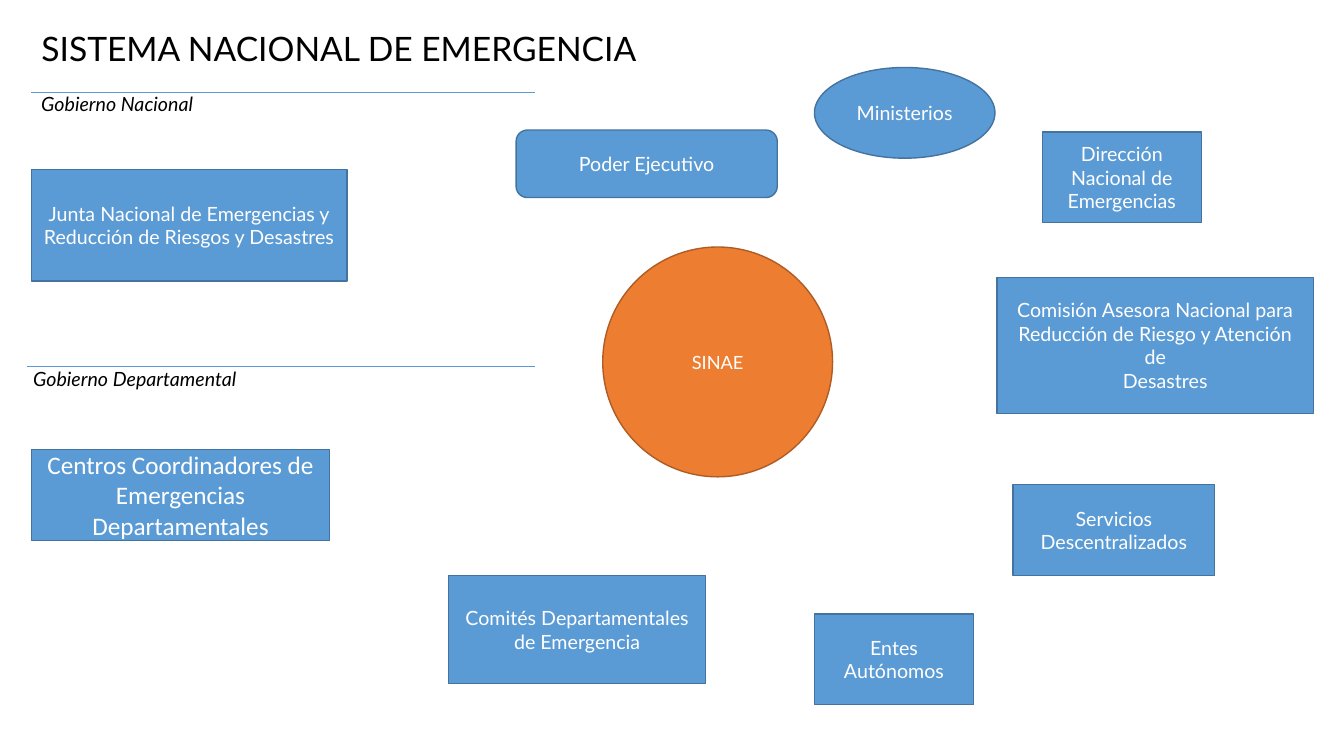
from lxml.etree import SubElement
from pptx import Presentation
from pptx.dml.color import RGBColor as RGB
from pptx.enum.shapes import MSO_CONNECTOR as CONN, MSO_SHAPE as SHAPE
from pptx.enum.text import MSO_ANCHOR as ANCHOR, MSO_AUTO_SIZE as FIT, PP_ALIGN as ALIGN
from pptx.oxml.ns import qn
from pptx.util import Inches, Pt

BLUE = RGB(0x5B, 0x9B, 0xD5)
NAVY = RGB(0x43, 0x73, 0x9E)
ORANGE = RGB(0xED, 0x7D, 0x31)
RUST = RGB(0xAF, 0x5C, 0x24)
WHITE = RGB(0xFF, 0xFF, 0xFF)
BLACK = RGB(0x00, 0x00, 0x00)

LEFT, RULE_END = 2.33, 39.83
ROW = 12


class Diagram:
    font = {"name": "Lato", "size": Pt(14)}
    boxed = {"word_wrap": True, "auto_size": FIT.NONE, "vertical_anchor": ANCHOR.MIDDLE}
    label = {"word_wrap": True, "auto_size": FIT.SHAPE_TO_FIT_TEXT, "vertical_anchor": ANCHOR.TOP}

    def __init__(self, prs):
        self.prs = prs
        self.s = prs.slides.add_slide(prs.slide_layouts[5])

    def x(self, share):
        return round(self.prs.slide_width * share / 100)

    def y(self, share):
        return round(self.prs.slide_height * share / 100)

    def area(self, left, top, width, height):
        return self.x(left), self.y(top), self.x(width), self.y(height)

    def apply(self, target, values):
        for key, value in values.items():
            setattr(target, key, value)

    def fill_text(self, tf, lines, frame, color, para, **font):
        self.apply(tf, frame)
        for i, line in enumerate(lines):
            p = tf.paragraphs[0] if i == 0 else tf.add_paragraph()
            self.apply(p, para)
            r = p.add_run()
            r.text = line
            self.apply(r.font, {**self.font, **font})
            r.font.color.rgb = color

    def title(self, text, *place):
        sp = self.s.shapes.title
        self.apply(sp, dict(zip(("left", "top", "width", "height"), self.area(*place))))
        para = {"alignment": ALIGN.LEFT, "line_spacing": 0.9}
        self.fill_text(sp.text_frame, [text], self.boxed, BLACK, para, size=Pt(24))

    def node(self, lines, *place, kind=SHAPE.RECTANGLE, fill=BLUE, edge=NAVY, **font):
        sp = self.s.shapes.add_shape(kind, *self.area(*place))
        sp.shadow.inherit = False
        sp.fill.solid()
        sp.fill.fore_color.rgb = fill
        sp.line.color.rgb = edge
        sp.line.width = Pt(1)
        self.fill_text(sp.text_frame, lines, self.boxed, WHITE, {"alignment": ALIGN.CENTER}, **font)
        return sp

    def section(self, text, rule_left, rule_top, left, top):
        y = self.y(rule_top)
        rule = self.s.shapes.add_connector(CONN.STRAIGHT, self.x(rule_left), y, self.x(RULE_END), y)
        rule.line.color.rgb = BLUE
        rule.line.width = Pt(0.5)
        SubElement(rule._element.spPr, qn("a:effectLst"))
        sp = self.s.shapes.add_textbox(*self.area(left, top, 17.63, 4.53))
        self.fill_text(sp.text_frame, [text], self.label, BLACK, {"alignment": ALIGN.LEFT}, italic=True)


def main():
    prs = Presentation()
    prs.slide_width, prs.slide_height = Inches(13.33), Inches(7.5)
    d = Diagram(prs)

    d.node(["SINAE"], 44.85, 32.67, 17.1, 30.4, kind=SHAPE.OVAL, fill=ORANGE, edge=RUST, size=Pt(13))
    d.title("SISTEMA NACIONAL DE EMERGENCIA", LEFT, 3.33, 75, 6.8)
    d.node(["Poder Ejecutivo"], 38.4, 17.2, 19.43, 8.93, kind=SHAPE.ROUNDED_RECTANGLE)
    d.node(["Ministerios"], 60.6, 8.93, 13.43, ROW, kind=SHAPE.OVAL)

    for text, *place in (
        ("Dirección Nacional de Emergencias", 77.55, 17.47, 11.85, ROW),
        ("Servicios Descentralizados", 75.38, 64.13, 15, ROW),
        ("Entes Autónomos", 60.6, 81.2, 11.85, ROW),
        ("Comités Departamentales de Emergencia", 33.38, 76.13, 19.13, 14.27),
        ("Junta Nacional de Emergencias y Reducción de Riesgos y Desastres", LEFT, 22.4, 23.48, 14.8),
    ):
        d.node([text], *place)

    advisers = d.node(
        ["Comisión Asesora Nacional para Reducción de Riesgo y Atención de", "Desastres"],
        74.18, 36.67, 23.55, 18,
    )
    p = advisers.text_frame.paragraphs[1]
    p._p.get_or_add_pPr().set("marL", str(d.x(1.5)))

    d.node(
        ["Centros Coordinadores de Emergencias Departamentales"],
        LEFT, 59.47, 22.2, ROW, name="Calibri", size=Pt(18),
    )
    d.section("Gobierno Nacional", LEFT, 12.27, LEFT, 11.47)
    d.section("Gobierno Departamental", 2.03, 48.4, 1.73, 47.87)
    prs.save("out.pptx")


if __name__ == "__main__":
    main()
